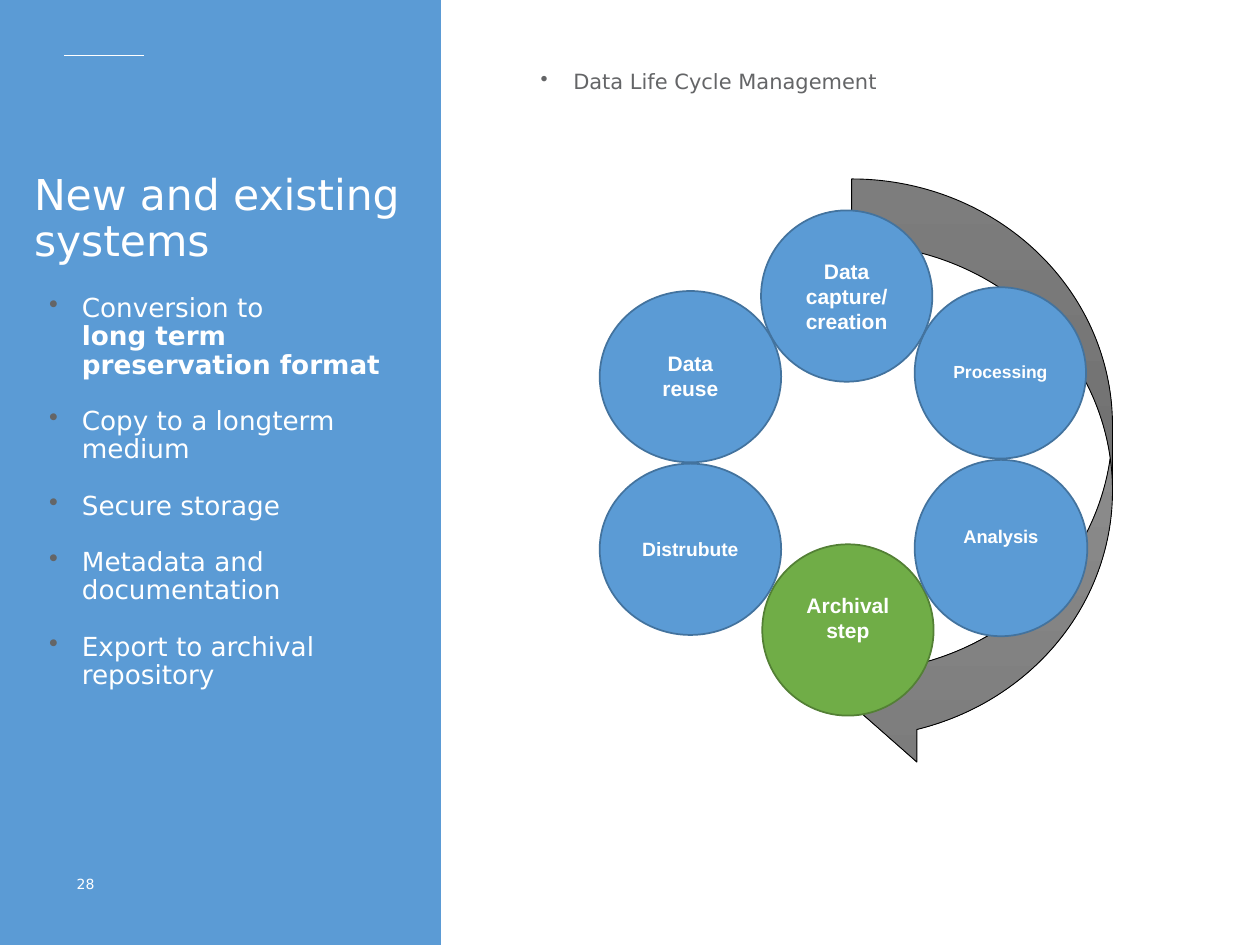
from lxml.etree import SubElement
from pptx import Presentation
from pptx.dml.color import RGBColor
from pptx.enum.shapes import MSO_CONNECTOR, MSO_SHAPE
from pptx.enum.text import MSO_ANCHOR, PP_ALIGN
from pptx.oxml.ns import qn
from pptx.util import Inches, Pt

STRAIGHT = MSO_CONNECTOR.STRAIGHT
RECTANGLE = MSO_SHAPE.RECTANGLE
ELLIPSE = MSO_SHAPE.OVAL
CURVED_ARROW = MSO_SHAPE.CURVED_LEFT_ARROW
MIDDLE = MSO_ANCHOR.MIDDLE
CENTER = PP_ALIGN.CENTER

WHITE = RGBColor(0xFF, 0xFF, 0xFF)
BLACK = RGBColor(0x00, 0x00, 0x00)
BLUE = RGBColor(0x5B, 0x9B, 0xD5)
DARK_BLUE = RGBColor(0x43, 0x73, 0x9E)
GREEN = RGBColor(0x70, 0xAD, 0x47)
DARK_GREEN = RGBColor(0x53, 0x80, 0x35)
GREY = RGBColor(0x64, 0x65, 0x67)
ARROW_LIGHT = RGBColor(0x9D, 0x9D, 0x9D)
ARROW_DARK = RGBColor(0x7C, 0x7C, 0x7C)

deck = Presentation()
deck.slide_width = Inches(10)
deck.slide_height = Inches(7.5)
page = deck.slides.add_slide(deck.slide_layouts[6])


def add_span(para, text, size, color, name="DejaVu Sans", bold=False):
    span = para.add_run()
    span.text = text
    span.font.color.rgb = color
    for key, value in {"name": name, "size": Pt(size), "bold": bold}.items():
        setattr(span.font, key, value)


def add_text(place, items, size, color, side=0.04, bullet=False, gap=0, spacing=0.9):
    box = page.shapes.add_textbox(*map(Inches, place))
    frame = box.text_frame
    frame.word_wrap = True
    frame.margin_left = frame.margin_right = Inches(side)
    for index, lines in enumerate(items):
        para = frame.add_paragraph() if index else frame.paragraphs[0]
        if bullet:
            props = para._p.get_or_add_pPr()
            props.set("marL", str(Inches(0.38)))
            props.set("indent", str(Inches(-0.26)))
            tint = SubElement(props, qn("a:buClr"))
            SubElement(tint, qn("a:srgbClr")).set("val", str(GREY))
            SubElement(props, qn("a:buChar")).set("char", "•")
        para.line_spacing = spacing
        if index:
            para.space_before = Pt(gap)
        for number, line in enumerate(lines):
            if number:
                para.add_line_break()
            add_span(para, line, size, color, bold=number > 0)


panel = page.shapes.add_shape(RECTANGLE, Inches(-0.03), 0, Inches(3.53), Inches(7.5))
panel.shadow.inherit = False
panel.fill.solid()
panel.fill.fore_color.rgb = BLUE
panel.line.fill.background()

rule = page.shapes.add_connector(STRAIGHT, Inches(0.51), Inches(0.44), Inches(1.14), Inches(0.44))
rule.line.color.rgb = WHITE
rule.line.width = Pt(1)
SubElement(rule._element.spPr, qn("a:effectLst"))

tasks = [
    ["Conversion to ", "long term preservation format"],
    ["Copy to a longterm medium"],
    ["Secure storage"],
    ["Metadata and documentation"],
    ["Export to archival repository"],
]
add_text((0.23, 1.33, 3.25, 0.77), [["New and existing systems"]], 24.3, WHITE)
add_text((0.23, 2.29, 3.08, 3.65), tasks, 15, WHITE, bullet=True, gap=16)
add_text((4.13, 0.52, 5.37, 6.14), [["Data Life Cycle Management"]], 12, GREY, bullet=True)
add_text((0.51, 6.9, 1.02, 0.32), [["28"]], 8, WHITE, side=0.1, spacing=1.0)

arrow = page.shapes.add_shape(CURVED_ARROW, Inches(6.76), Inches(1.42), Inches(2.07), Inches(4.69))
arrow.shadow.inherit = False
arrow.fill.gradient()
arrow.fill.gradient_angle = 270
for stop, color in zip(arrow.fill.gradient_stops, (ARROW_LIGHT, ARROW_DARK)):
    stop.color.rgb = color
arrow.line.color.rgb = BLACK
arrow.line.width = Pt(0.5)

steps = [
    ("Data capture/ creation", (6.04, 1.67, 1.36, 1.36), 12, BLUE, DARK_BLUE, 0.05),
    ("Archival step", (6.05, 4.32, 1.36, 1.36), 12, GREEN, DARK_GREEN, 0.24),
    ("Processing", (7.26, 2.28, 1.36, 1.36), 10, BLUE, DARK_BLUE, 0.07),
    ("Analysis", (7.26, 3.65, 1.37, 1.4), 10.5, BLUE, DARK_BLUE, 0.24),
    ("Data reuse", (4.76, 2.31, 1.44, 1.36), 12, BLUE, DARK_BLUE, 0.07),
    ("Distrubute", (4.76, 3.68, 1.44, 1.36), 11, BLUE, DARK_BLUE, 0.05),
]
for label, place, size, fill, outline, bottom in steps:
    circle = page.shapes.add_shape(ELLIPSE, *map(Inches, place))
    circle.shadow.inherit = False
    circle.fill.solid()
    circle.fill.fore_color.rgb = fill
    circle.line.color.rgb = outline
    circle.line.width = Pt(1)
    frame = circle.text_frame
    layout = {"word_wrap": True, "vertical_anchor": MIDDLE, "margin_bottom": Inches(bottom)}
    for key, value in layout.items():
        setattr(frame, key, value)
    para = frame.paragraphs[0]
    para.alignment = CENTER
    add_span(para, label, size, WHITE, name="Arial", bold=True)

deck.save("out.pptx")
